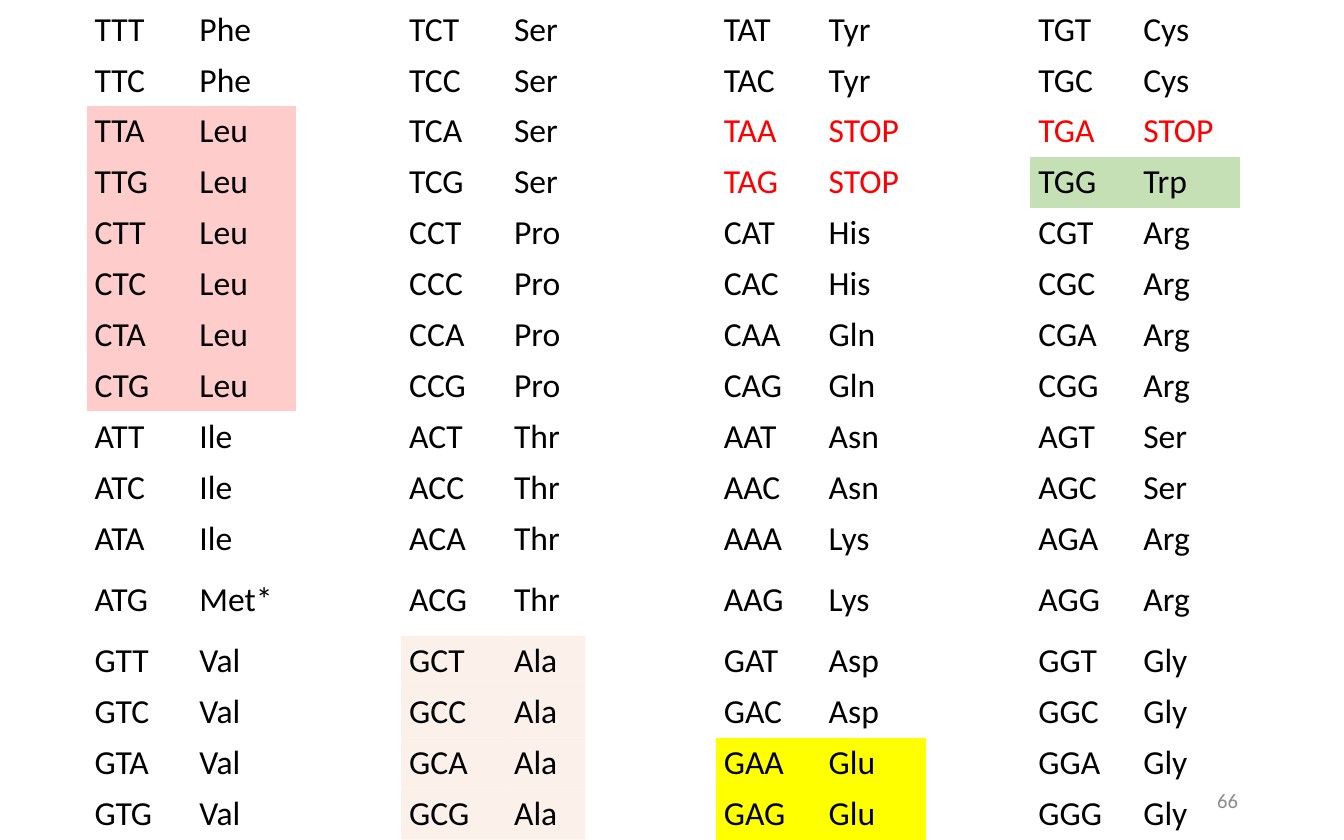
from dataclasses import dataclass
from itertools import product

from pptx import Presentation
from pptx.dml.color import RGBColor as RGB
from pptx.enum.text import MSO_ANCHOR as Anchor, PP_ALIGN as Align
from pptx.oxml.ns import qn
from pptx.oxml.xmlchemy import OxmlElement as Element
from pptx.util import Pt


@dataclass(frozen=True)
class Theme:
    font: str = "Calibri"
    body: int = 18
    small: int = 11
    ink: str = "000000"
    stop: str = "FF0000"
    gray: str = "8C8C8C"
    leu: str = "FFCCCC"
    ala: str = "FBE5D6"
    trp: str = "C5E0B4"
    glu: str = "FFFF00"


THEME = Theme()
BASES = "TCAG"

# Amino acids for each second base, with the number of codons in a row
ACIDS = {
    "T": [("Phe", 2), ("Leu", 6), ("Ile", 3), ("Met*", 1), ("Val", 4)],
    "C": [("Ser", 4), ("Pro", 4), ("Thr", 4), ("Ala", 4)],
    "A": [("Tyr", 2), ("STOP", 2), ("His", 2), ("Gln", 2),
          ("Asn", 2), ("Lys", 2), ("Asp", 2), ("Glu", 2)],
    "G": [("Cys", 2), ("STOP", 1), ("Trp", 1), ("Arg", 4),
          ("Ser", 2), ("Arg", 2), ("Gly", 4)],
}
# Fill colour and opacity in percent
FILLS = {"Leu": (THEME.leu, 100), "Ala": (THEME.ala, 50),
         "Trp": (THEME.trp, 100), "Glu": (THEME.glu, 100)}

STEP = 56.2
WIDTHS = [STEP] * 4 + [42.5, 69.9] + [STEP] * 5
HEIGHTS = [27.27] * 11 + [38.5] + [27.27] * 4


def add_run(para, text, size, color):
    run = para.add_run()
    run.text = text
    run.font.name = THEME.font
    run.font.size = Pt(size)
    run.font.color.rgb = RGB.from_string(color)


def fill_cell(cell, color, alpha):
    cell.fill.solid()
    cell.fill.fore_color.rgb = RGB.from_string(color)
    if alpha < 100:
        node = Element("a:alpha")
        node.set("val", str(alpha * 1000))
        next(cell.fill._xPr.iter(qn("a:srgbClr"))).append(node)


def write_cell(cell, text, acid):
    color = THEME.stop if acid == "STOP" else THEME.ink
    add_run(cell.text_frame.paragraphs[0], text, THEME.body, color)
    if acid in FILLS:
        fill_cell(cell, *FILLS[acid])


def add_grid(slide):
    frame = slide.shapes.add_table(
        len(HEIGHTS), len(WIDTHS), Pt(46.4), Pt(2.2),
        Pt(sum(WIDTHS)), Pt(sum(HEIGHTS)))
    table = frame.table
    table.first_row = table.horz_banding = False
    # Table style without fills or borders
    style = next(frame.element.iter(qn("a:tableStyleId")))
    style.text = "{2D5ABB26-0587-4C30-8999-92F81FD0307C}"

    for col, width in zip(table.columns, WIDTHS):
        col.width = Pt(width)
    for row, height in zip(table.rows, HEIGHTS):
        row.height = Pt(height)
    for cell in table.iter_cells():
        cell.margin_left = cell.margin_right = Pt(4.3)
        cell.margin_top = cell.margin_bottom = Pt(2.15)
        cell.vertical_anchor = Anchor.MIDDLE
        cell.fill.background()
    return table


def add_codons(table):
    for block, mid in enumerate(BASES):
        names = [name for name, count in ACIDS[mid] for _ in range(count)]
        pairs = product(BASES, repeat=2)
        for row, ((first, last), acid) in enumerate(zip(pairs, names)):
            col = 3 * block
            write_cell(table.cell(row, col), first + mid + last, acid)
            write_cell(table.cell(row, col + 1), acid, acid)


def add_number(slide, text):
    box = slide.shapes.add_textbox(Pt(508.3), Pt(416.9), Pt(162), Pt(23.8))
    frame = box.text_frame
    frame.word_wrap = True
    frame.vertical_anchor = Anchor.MIDDLE
    para = frame.paragraphs[0]
    para.alignment = Align.RIGHT
    add_run(para, text, THEME.small, THEME.gray)


def main():
    deck = Presentation()
    deck.slide_width, deck.slide_height = Pt(720), Pt(450)
    slide = deck.slides.add_slide(deck.slide_layouts[6])

    # Codon table
    add_codons(add_grid(slide))

    # Slide number
    add_number(slide, "66")

    deck.save("out.pptx")


if __name__ == "__main__":
    main()
